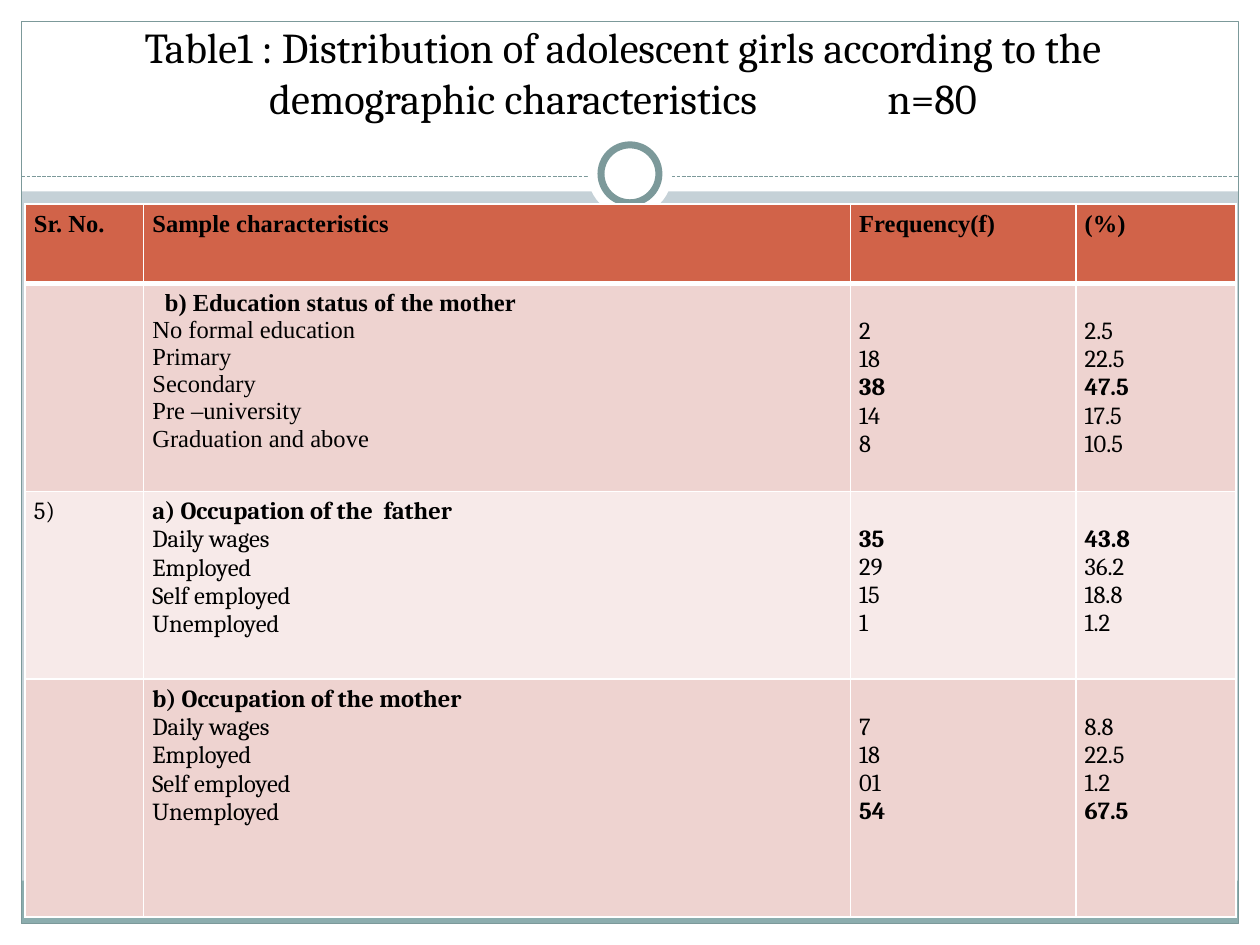
import pptx
import pptx.util
import pptx.dml.color
import pptx.enum.dml
import pptx.enum.shapes
import pptx.enum.text
import pptx.oxml
import pptx.oxml.ns

Inches = pptx.util.Inches
Pt = pptx.util.Pt
SHAPE = pptx.enum.shapes.MSO_SHAPE
ALIGN = pptx.enum.text.PP_ALIGN
SERIF, ROMAN = "Cambria", "Times New Roman"
WHITE, TEAL = "FFFFFF", "7C999A"

HEADS = ["Sr. No.", "Sample characteristics", "Frequency(f)", "(%)"]
GROUPS = [
    ("", "b) Education status of the mother", [
        ("No formal education", "2", "2.5"),
        ("Primary", "18", "22.5"),
        ("Secondary", "38", "47.5"),
        ("Pre –university", "14", "17.5"),
        ("Graduation and above", "8", "10.5")]),
    ("5)", "a) Occupation of the  father", [
        ("Daily wages", "35", "43.8"),
        ("Employed", "29", "36.2"),
        ("Self employed", "15", "18.8"),
        ("Unemployed", "1", "1.2")]),
    ("", "b) Occupation of the mother", [
        ("Daily wages", "7", "8.8"),
        ("Employed", "18", "22.5"),
        ("Self employed", "01", "1.2"),
        ("Unemployed", "54", "67.5")]),
]


def color(code):
    return pptx.dml.color.RGBColor.from_string(code)


def format(item, values):
    for name, value in values.items():
        setattr(item, name, value)


def paint(item, code):
    item.fill.solid()
    item.fill.fore_color.rgb = color(code)


def write(para, text, size, font, bold=False):
    run = para.add_run()
    run.text = text
    format(run.font, {"size": Pt(size), "name": font, "bold": bold})
    run.font.color.rgb = color("000000")
    return run


def shape(slide, kind, box, fill=None, line=None, width=0.75):
    item = slide.shapes.add_shape(kind, *map(Inches, box))
    item.shadow.inherit = False
    if fill:
        paint(item, fill)
    else:
        item.fill.background()
    if line:
        item.line.color.rgb = color(line)
        item.line.width = Pt(width)
    else:
        item.line.fill.background()


def frame(slide, box):
    left, top, wide, high = box
    edge, rule = 0.17, 1.4
    right, base = left + wide, top + high
    for strip in [(left, base - edge, wide, edge), (left, top, wide, 1.52),
                  (left, top, edge, high), (right - edge, top, edge, high)]:
        shape(slide, SHAPE.RECTANGLE, strip, WHITE)
    inner = wide - 2 * edge
    shape(slide, SHAPE.RECTANGLE, (left + edge, base - edge - 0.34, inner, 0.34), "8CADAE")
    shape(slide, SHAPE.RECTANGLE, (left + edge, top + edge, inner, high - 2 * edge), line=TEAL)
    dash = slide.shapes.add_connector(
        pptx.enum.shapes.MSO_CONNECTOR.STRAIGHT,
        *map(Inches, (left + edge, top + rule, right - edge, top + rule)))
    format(dash.line, {"width": Pt(0.75),
                       "dash_style": pptx.enum.dml.MSO_LINE.SQUARE_DOT})
    dash.line.color.rgb = color(TEAL)
    props = dash.element.spPr
    props.append(props.makeelement(pptx.oxml.ns.qn("a:effectLst"), {}))
    for size, line in [(0.67, None), (0.46, TEAL)]:
        ring = (left + (wide - size) / 2, top + 1.38 - size / 2, size, size)
        shape(slide, SHAPE.OVAL, ring, WHITE, line, 4)


def title(slide, box):
    body = slide.shapes.add_textbox(*map(Inches, box)).text_frame
    format(body, {"word_wrap": True, "margin_bottom": Inches(0.52),
                  "vertical_anchor": pptx.enum.text.MSO_ANCHOR.BOTTOM})
    para = body.paragraphs[0]
    para.alignment = ALIGN.CENTER
    write(para, "Table1 : Distribution of adolescent girls according to the "
                "demographic characteristics", 24.3, SERIF)
    gap = write(para, " ", 24.3, SERIF)
    gap.font._element.set("spc", "6900")
    write(para, "n=80", 24.3, SERIF)


def border(cell, sides):
    props = cell._tc.get_or_add_tcPr()
    for side, width in sides.items():
        props.append(pptx.oxml.parse_xml(
            f'<a:ln{side} {pptx.oxml.ns.nsdecls("a")} w="{Pt(width)}">'
            f'<a:solidFill><a:srgbClr val="{WHITE}"/></a:solidFill></a:ln{side}>'))


def fill(cell, lines, font, bolds=(), drop=0):
    format(cell, {"margin_left": Inches(0.07), "margin_right": Inches(0.07),
                  "margin_top": Inches(0.05 + drop), "margin_bottom": Inches(0.05)})
    body = cell.text_frame
    for i, text in enumerate(lines):
        para = body.add_paragraph() if i else body.paragraphs[0]
        if text:
            write(para, text, 14, font, i in bolds)


def table(slide, box):
    grid = slide.shapes.add_table(len(GROUPS) + 1, len(HEADS), *map(Inches, box)).table
    format(grid, {"first_row": False, "horz_banding": False})
    for col, wide in zip(grid.columns, [0.94, 5.61, 1.79, 1.27]):
        col.width = Inches(wide)
    for row, high in zip(grid.rows, [0.63, 1.65, 1.49, 1.89]):
        row.height = Inches(high)
    for r, code in enumerate(["D16349", "EED3D0", "F7EAE9", "EED3D0"]):
        for cell in grid.rows[r].cells:
            border(cell, {"L": 1, "R": 1, "T": 3 if r == 1 else 1, "B": 1 if r else 3})
            paint(cell, code)
    for c, head in enumerate(HEADS):
        fill(grid.cell(0, c), [head], ROMAN, [0])
    for r, (mark, head, items) in enumerate(GROUPS, 1):
        names, counts, rates = zip(*items)
        peak = max(range(len(counts)), key=lambda i: int(counts[i]))
        fill(grid.cell(r, 0), [mark], SERIF)
        fill(grid.cell(r, 1), [head, *names], ROMAN if r == 1 else SERIF, [0])
        for c, values in [(2, counts), (3, rates)]:
            fill(grid.cell(r, c), values, SERIF, [peak], 0.22)
    first = grid.cell(1, 1).text_frame.paragraphs[0]
    first._p.get_or_add_pPr().set("marL", str(Inches(0.1)))


def main():
    deck = pptx.Presentation()
    format(deck, {"slide_width": Inches(10), "slide_height": Inches(7.5)})
    slide = deck.slides.add_slide(deck.slide_layouts[6])
    paint(slide.background, "C5D1D7")
    frame(slide, (0, 0, 10, 7.5))
    title(slide, (0.2, 0.13, 9.49, 1.37))
    table(slide, (0.2, 1.62, 9.61, 5.67))
    deck.save("out.pptx")


if __name__ == "__main__":
    main()
